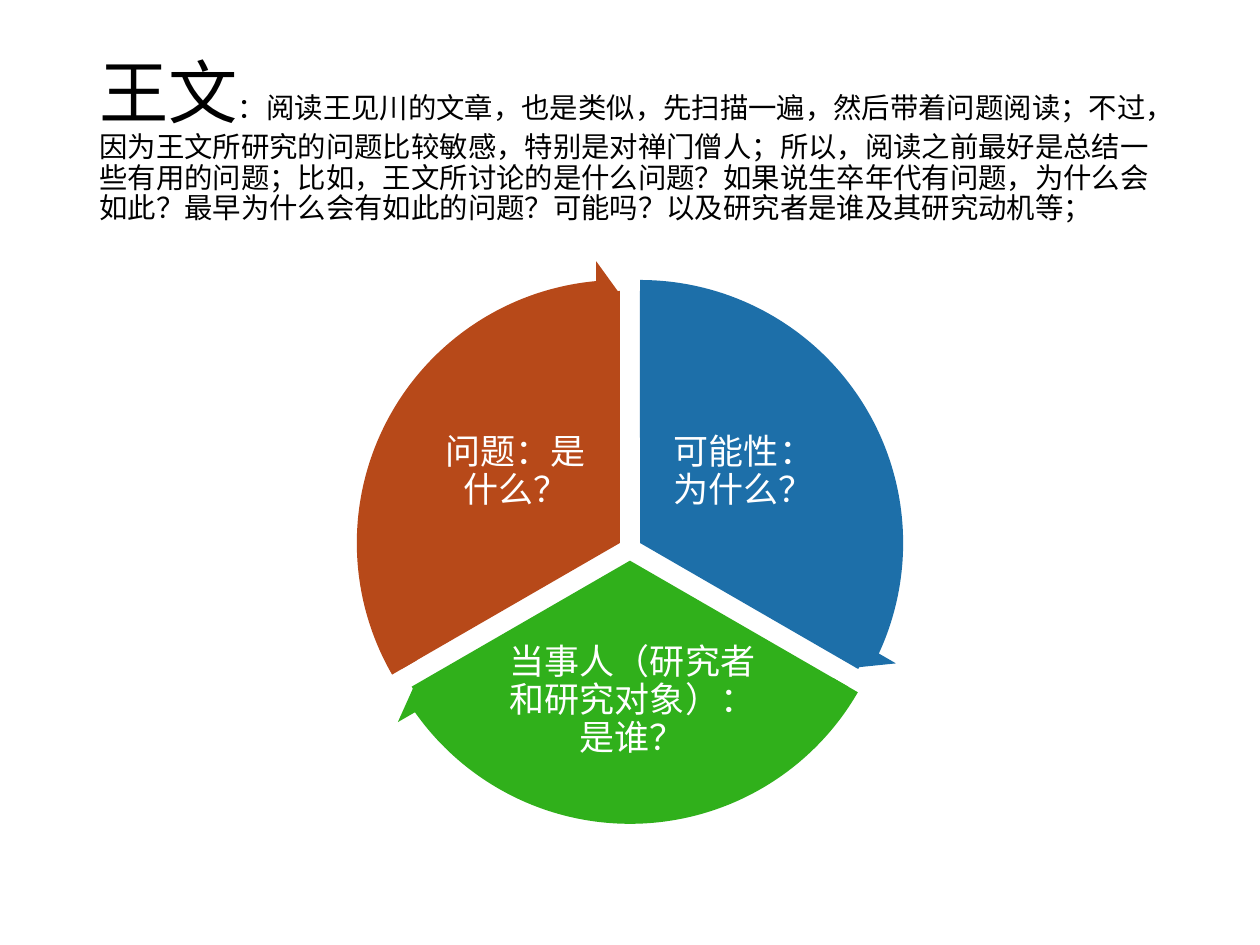
from dataclasses import dataclass

from pptx import Presentation
from pptx.dml.color import RGBColor
from pptx.enum.lang import MSO_LANGUAGE_ID
from pptx.enum.shapes import MSO_SHAPE
from pptx.enum.text import MSO_ANCHOR, PP_ALIGN
from pptx.slide import Slide
from pptx.util import Inches, Pt

PIE, ARROW = MSO_SHAPE.PIE, MSO_SHAPE.CIRCULAR_ARROW
MIDDLE, LEFT, CENTER = MSO_ANCHOR.MIDDLE, PP_ALIGN.LEFT, PP_ALIGN.CENTER
CHINESE = MSO_LANGUAGE_ID.SIMPLIFIED_CHINESE
COLORS = {"title": "000000", "label": "FFFFFF", "why": "1D6FA9", "who": "30B01B", "what": "B74919"}
DEGREE = 0.6
PIE_SIZE, ARROW_SIZE = 4, 4.49
ARROW_WIDTH, HEAD_ANGLE, HEAD_WIDTH = 0.05, 3.28, 0.06

HEADING = "王文"
GUIDANCE = (
    "：阅读王见川的文章，也是类似，先扫描一遍，然后带着问题阅读；不过，"
    "因为王文所研究的问题比较敏感，特别是对禅门僧人；所以，阅读之前最好是总结一些有用的问题；"
    "比如，王文所讨论的是什么问题？如果说生卒年代有问题，为什么会如此？"
    "最早为什么会有如此的问题？可能吗？以及研究者是谁及其研究动机等；"
)

SECTORS = [
    ("why", (5.08, 4.31), 270, 30, "可能性：为什么？", (5.19, 3.15, 1.43, 1.19)),
    ("who", (5, 4.45), 30, 150, "当事人（研究者和研究对象）：是谁？", (3.95, 5.04, 2.14, 1.05)),
    ("what", (4.92, 4.31), 150, 270, "问题：是什么？", (3.38, 3.15, 1.43, 1.19)),
]


@dataclass
class CycleSlide:
    """Draws text and cycle parts on one slide in a shared style."""

    slide: Slide
    font: str = "Times New Roman"
    line_spacing: float = 0.9

    def text(self, box, pieces, color, align=LEFT, inset=None):
        frame = self.slide.shapes.add_textbox(*map(Inches, box)).text_frame
        frame.word_wrap = True
        frame.vertical_anchor = MIDDLE
        if inset is not None:
            frame.margin_left = frame.margin_right = Inches(inset)
            frame.margin_top = frame.margin_bottom = Inches(inset)
        paragraph = frame.paragraphs[0]
        paragraph.alignment = align
        paragraph.line_spacing = self.line_spacing
        for wording, size in pieces:
            run = paragraph.add_run()
            run.text = wording
            run.font.name = self.font
            run.font.size = Pt(size)
            run.font.language_id = CHINESE
            run.font.color.rgb = RGBColor.from_string(COLORS[color])

    def round_part(self, kind, center, size, color, adjustments):
        left, top = (Inches(middle - size / 2) for middle in center)
        part = self.slide.shapes.add_shape(kind, left, top, Inches(size), Inches(size))
        for index, value in enumerate(adjustments):
            part.adjustments[index] = value
        part.shadow.inherit = False
        part.fill.solid()
        part.fill.fore_color.rgb = RGBColor.from_string(COLORS[color])
        part.line.fill.background()

    def sector(self, center, color, start, end):
        self.round_part(PIE, center, PIE_SIZE, color, (start * DEGREE, end * DEGREE))

    def rim_arrow(self, center, color, start, end):
        bend = (ARROW_WIDTH, HEAD_ANGLE, end * DEGREE - HEAD_ANGLE, start * DEGREE, HEAD_WIDTH)
        self.round_part(ARROW, center, ARROW_SIZE, color, bend)


def main():
    deck = Presentation()
    deck.slide_width, deck.slide_height = Inches(10), Inches(7.5)
    page = CycleSlide(deck.slides.add_slide(deck.slide_layouts[6]))
    page.text((0.69, 0.4, 8.62, 1.45), [(HEADING, 39.6), (GUIDANCE, 16.2)], "title")
    for color, center, start, end, question, box in SECTORS:
        page.sector(center, color, start, end)
        page.text(box, [(question, 20)], "label", CENTER, 0.03)
    for color, center, start, end, *_ in SECTORS:
        page.rim_arrow(center, color, start, end)
    deck.save("out.pptx")


if __name__ == "__main__":
    main()
